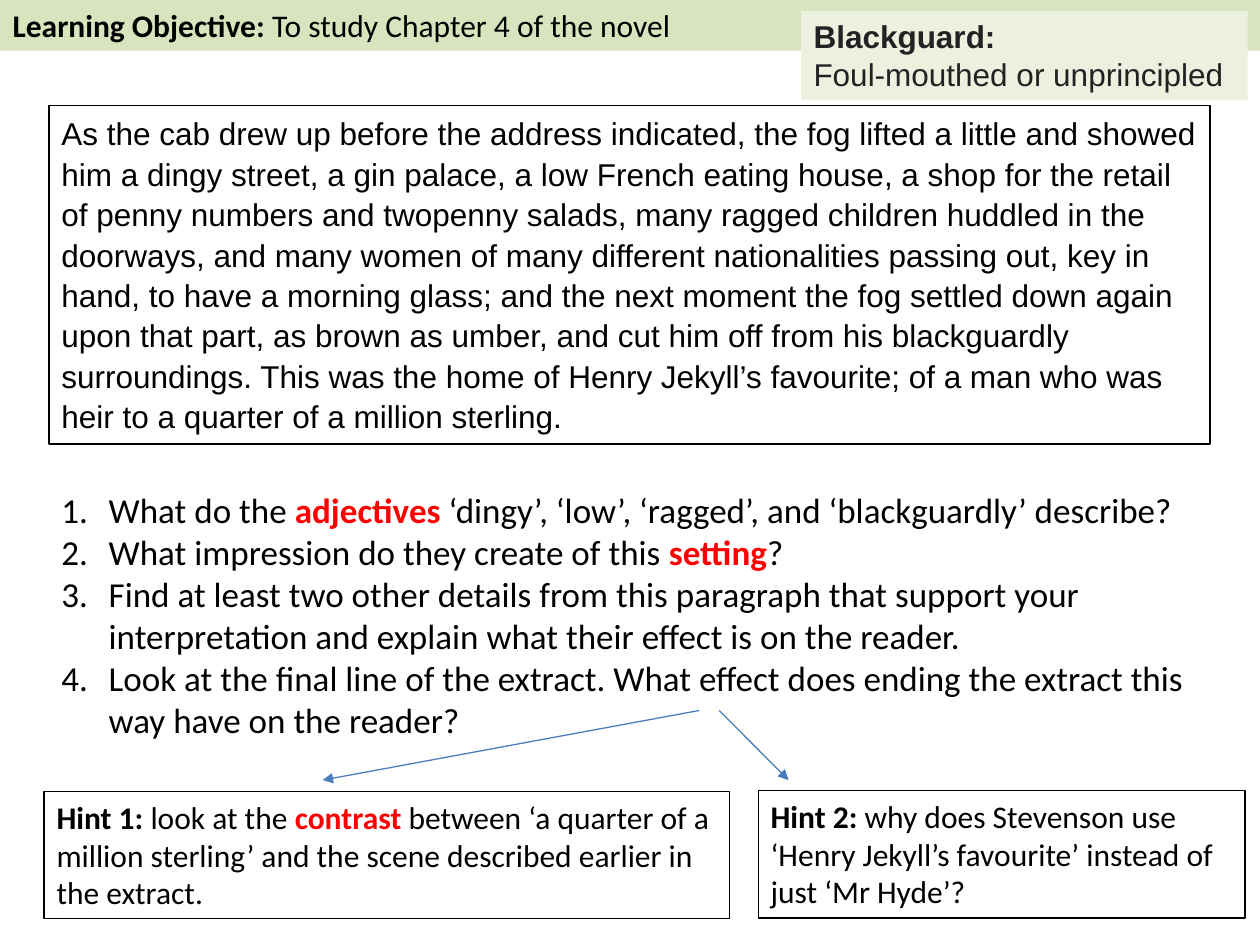
from dataclasses import dataclass
from typing import NamedTuple, Optional

from lxml.etree import SubElement
from pptx import Presentation
from pptx.dml.color import RGBColor
from pptx.enum.shapes import MSO_CONNECTOR, MSO_SHAPE
from pptx.enum.text import MSO_ANCHOR, MSO_AUTO_SIZE, PP_ALIGN
from pptx.oxml.ns import qn
from pptx.util import Pt


@dataclass(frozen=True)
class Theme:
    body_font: str = "Calibri"
    extract_font: str = "Arial"
    text_size: float = 18
    question_size: float = 20
    ink: str = "000000"
    definition_ink: str = "222222"
    key_word: str = "FF0000"
    banner: str = "D7E4BD"
    definition_fill: str = "EBF1DE"
    arrow: str = "4B7EBC"
    line_width: float = 0.75


THEME = Theme()


class Run(NamedTuple):
    text: str
    bold: bool = False
    color: Optional[str] = None


class Bounds(NamedTuple):
    left: float
    top: float
    width: float
    height: float


@dataclass(frozen=True)
class Panel:
    bounds: Bounds
    paragraphs: list[list[Run]]
    font: str = THEME.body_font
    size: float = THEME.text_size
    ink: str = THEME.ink
    fill: Optional[str] = None
    outlined: bool = False
    line_spacing: Optional[float] = None
    numbered: bool = False


class Arrow(NamedTuple):
    start: tuple[float, float]
    end: tuple[float, float]


def key_word(text: str) -> Run:
    return Run(text, True, THEME.key_word)


OBJECTIVE = Panel(
    Bounds(0, 0, 720, 29),
    [[Run("Learning Objective: ", True), Run("To study Chapter 4 of the novel")]],
    fill=THEME.banner,
)

EXTRACT = Panel(
    Bounds(28, 60.3, 663.5, 193.5),
    [[Run(
        "As the cab drew up before the address indicated, the fog lifted a little and "
        "showed him a dingy street, a gin palace, a low French eating house, a shop for "
        "the retail of penny numbers and twopenny salads, many ragged children huddled in "
        "the doorways, and many women of many different nationalities passing out, key in "
        "hand, to have a morning glass; and the next moment the fog settled down again "
        "upon that part, as brown as umber, and cut him off from his blackguardly "
        "surroundings. This was the home of Henry Jekyll’s favourite; of a man who was "
        "heir to a quarter of a million sterling."
    )]],
    font=THEME.extract_font,
    outlined=True,
    line_spacing=1.07,
)

QUESTIONS = Panel(
    Bounds(28, 275.8, 663.5, 152.6),
    [
        [Run("What do the "), key_word("adjectives "),
         Run("‘dingy’, ‘low’, ‘ragged’, and ‘blackguardly’ describe?")],
        [Run("What impression do they create of this "), key_word("setting"), Run("?")],
        [Run("Find at least two other details from this paragraph that support your "
             "interpretation and explain what their effect is on the reader.")],
        [Run("Look at the final line of the extract. What effect does ending the extract "
             "this way have on the reader?")],
    ],
    size=THEME.question_size,
    numbered=True,
)

HINT_CONTRAST = Panel(
    Bounds(25.2, 452.3, 391.5, 72.7),
    [[Run("Hint 1: ", True), Run("look at the "), key_word("contrast"),
      Run(" between ‘a quarter of a million sterling’ and the scene described earlier "
          "in the extract.")]],
    outlined=True,
)

HINT_NAME = Panel(
    Bounds(433.3, 451.8, 278.2, 72.7),
    [[Run("Hint 2: ", True),
      Run("why does Stevenson use ‘Henry Jekyll’s favourite’ instead of just ‘Mr Hyde’?")]],
    outlined=True,
)

DEFINITION = Panel(
    Bounds(457.8, 6.3, 255.2, 50.9),
    [[Run("Blackguard:", True)], [Run("Foul-mouthed or unprincipled")]],
    font=THEME.extract_font,
    ink=THEME.definition_ink,
    fill=THEME.definition_fill,
)

HINT_ARROWS = [
    Arrow((399.6, 406), (184.4, 445.8)),
    Arrow((411, 406), (450.6, 445.8)),
]


def place(shape, bounds: Bounds) -> None:
    for side, points in bounds._asdict().items():
        setattr(shape, side, Pt(points))


def number_paragraph(paragraph) -> None:
    """Give the paragraph a hanging indent and an automatic number."""
    properties = paragraph._p.get_or_add_pPr()
    hang = Pt(27)
    properties.set("marL", str(hang))
    properties.set("indent", str(-hang))
    SubElement(properties, qn("a:buFont"), typeface="+mj-lt")
    SubElement(properties, qn("a:buAutoNum"), type="arabicPeriod")


def write_text(frame, panel: Panel) -> None:
    frame_format = {
        "word_wrap": True,
        "auto_size": MSO_AUTO_SIZE.NONE,
        "vertical_anchor": MSO_ANCHOR.TOP,
    }
    for name, value in frame_format.items():
        setattr(frame, name, value)
    for index, runs in enumerate(panel.paragraphs):
        paragraph = frame.paragraphs[0] if index == 0 else frame.add_paragraph()
        paragraph.alignment = PP_ALIGN.LEFT
        if panel.line_spacing:
            paragraph.line_spacing = panel.line_spacing
        if panel.numbered:
            number_paragraph(paragraph)
        for part in runs:
            run = paragraph.add_run()
            run.text = part.text
            font_format = {"name": panel.font, "size": Pt(panel.size), "bold": part.bold}
            for name, value in font_format.items():
                setattr(run.font, name, value)
            run.font.color.rgb = RGBColor.from_string(part.color or panel.ink)


def format_panel(shape, panel: Panel) -> None:
    place(shape, panel.bounds)
    if panel.fill:
        shape.fill.solid()
        shape.fill.fore_color.rgb = RGBColor.from_string(panel.fill)
    else:
        shape.fill.background()
    if panel.outlined:
        shape.line.color.rgb = RGBColor.from_string(THEME.ink)
        shape.line.width = Pt(THEME.line_width)
    else:
        shape.line.fill.background()
    write_text(shape.text_frame, panel)


def draw_panel(slide, panel: Panel) -> None:
    bounds = [Pt(points) for points in panel.bounds]
    if panel.fill or panel.outlined:
        shape = slide.shapes.add_shape(MSO_SHAPE.RECTANGLE, *bounds)
        shape.shadow.inherit = False
    else:
        shape = slide.shapes.add_textbox(*bounds)
    format_panel(shape, panel)


def draw_arrow(slide, arrow: Arrow) -> None:
    ends = [Pt(points) for points in arrow.start + arrow.end]
    connector = slide.shapes.add_connector(MSO_CONNECTOR.STRAIGHT, *ends)
    connector.line.color.rgb = RGBColor.from_string(THEME.arrow)
    connector.line.width = Pt(THEME.line_width)
    SubElement(connector.line._get_or_add_ln(), qn("a:tailEnd"), type="triangle")
    SubElement(connector._element.spPr, qn("a:effectLst"))


def main() -> None:
    deck = Presentation()
    deck.slide_width, deck.slide_height = Pt(720), Pt(540)
    slide = deck.slides.add_slide(deck.slide_layouts.get_by_name("Title Only"))
    format_panel(slide.shapes.title, OBJECTIVE)
    for panel in (EXTRACT, QUESTIONS, HINT_CONTRAST):
        draw_panel(slide, panel)
    for arrow in HINT_ARROWS:
        draw_arrow(slide, arrow)
    for panel in (HINT_NAME, DEFINITION):
        draw_panel(slide, panel)
    deck.save("out.pptx")


if __name__ == "__main__":
    main()
